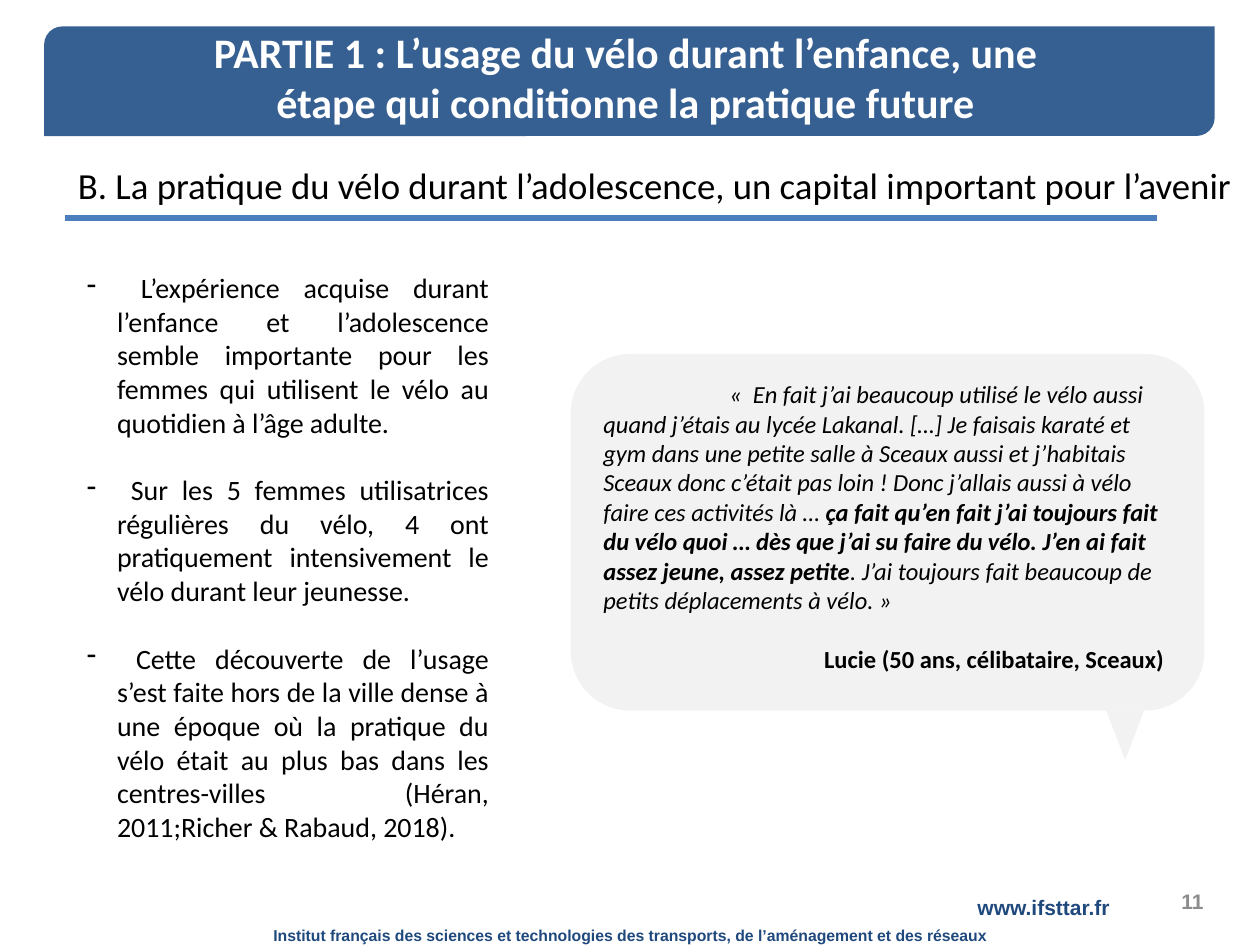
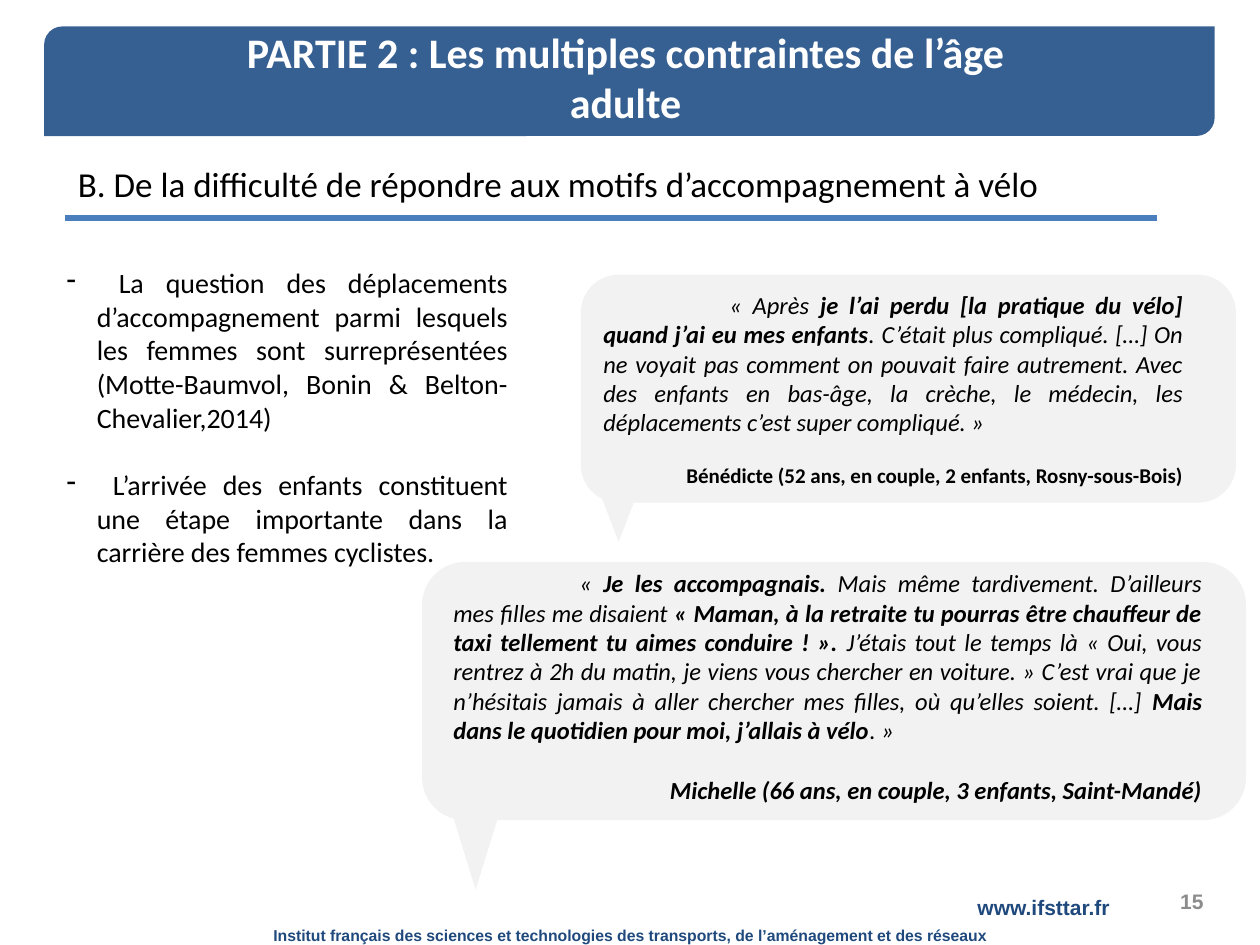
from pptx import Presentation
from pptx.dml.color import RGBColor
from pptx.enum.shapes import MSO_CONNECTOR, MSO_SHAPE
from pptx.enum.text import MSO_ANCHOR, PP_ALIGN
from pptx.oxml.ns import qn
from pptx.util import Emu, Inches, Pt
from lxml.etree import SubElement

WIDTH, HEIGHT = Inches(10), Inches(7.5)
COLUMNS, ROWS = 100, 75

BAND_BLUE = "376092"
RULE_BLUE = "4B7EBC"
FOOTER_BLUE = "1F497D"
NUMBER_GREY = "8C8C8C"
BUBBLE_GREY = "F2F2F2"
WHITE, BLACK = "FFFFFF", "000000"
BODY_FONT, FOOTER_FONT = "Calibri", "Arial"
LINE_HEIGHT = 1.22

INSTITUTE = ("Institut français des sciences et technologies des transports, "
             "de l’aménagement et des réseaux")


def color(value):
    return RGBColor.from_string(value)


def grid(column, row):
    return Emu(int(WIDTH * column / COLUMNS)), Emu(int(HEIGHT * row / ROWS))


def area(left, top, width, height):
    return *grid(left, top), *grid(width, height)


def add_box(page, place, anchor=MSO_ANCHOR.TOP):
    frame = page.shapes.add_textbox(*area(*place)).text_frame
    frame.word_wrap = True
    frame.vertical_anchor = anchor
    return frame


def add_span(para, text, size, hue=BLACK, font=BODY_FONT, bold=False, italic=False):
    span = para.add_run()
    span.text = text
    span.font.name, span.font.size = font, Pt(size)
    span.font.bold, span.font.italic = bold, italic
    span.font.color.rgb = color(hue)


def add_label(page, place, text, size, align=PP_ALIGN.LEFT,
              anchor=MSO_ANCHOR.TOP, **style):
    """Add a text box that holds a single one-style paragraph."""
    para = add_box(page, place, anchor).paragraphs[0]
    para.alignment = align
    add_span(para, text, size, **style)


def add_plain_shape(page, kind, place, fill):
    shape = page.shapes.add_shape(kind, *area(*place))
    shape.shadow.inherit = False
    shape.fill.solid()
    shape.fill.fore_color.rgb = color(fill)
    shape.line.fill.background()
    return shape


def add_rule(page, left, right, row):
    rule = page.shapes.add_connector(
        MSO_CONNECTOR.STRAIGHT, *grid(left, row), *grid(right, row))
    rule.line.color.rgb = color(RULE_BLUE)
    rule.line.width = Pt(3)
    SubElement(rule._element.spPr, qn("a:effectLst"))


def add_page(deck, title, heading, heading_size, number):
    """Add a page with its title band, underlined heading and footer."""
    page = deck.slides.add_slide(deck.slide_layouts[6])
    add_label(page, (0, 73, 100, 2.5), INSTITUTE, 9, PP_ALIGN.CENTER,
              hue=FOOTER_BLUE, font=FOOTER_FONT, bold=True)
    add_label(page, (76.6, 70.5, 20.7, 3), "www.ifsttar.fr", 12,
              hue=FOOTER_BLUE, font=FOOTER_FONT, bold=True)
    add_label(page, (69.7, 69.5, 26.8, 4), number, 12, PP_ALIGN.RIGHT,
              MSO_ANCHOR.MIDDLE, hue=NUMBER_GREY, font=FOOTER_FONT, bold=True)
    add_plain_shape(page, MSO_SHAPE.ROUND_2_DIAG_RECTANGLE,
                    (3.5, 2.1, 92.9, 8.7), BAND_BLUE)
    add_label(page, (15.4, 1.6, 68.5, 8.4), title, 24, PP_ALIGN.CENTER,
              hue=WHITE, bold=True)
    add_label(page, (5.2, 12.4, 94, 4.4), heading, heading_size)
    add_rule(page, 5.2, 91.8, 17.3)
    return page


def add_dash_list(page, place, items, size=16):
    frame = add_box(page, place)
    for index, item in enumerate(items):
        para = frame.add_paragraph() if index else frame.paragraphs[0]
        para.alignment = PP_ALIGN.JUSTIFY
        if index:
            para.space_before = Pt(round(size * LINE_HEIGHT, 1))
        properties = para._p.get_or_add_pPr()
        hanging = Inches(0.24)
        properties.set("marL", str(hanging))
        properties.set("indent", str(-hanging))
        SubElement(properties, qn("a:buChar")).set("char", "-")
        add_span(para, " " + item, size)


def add_bubble(page, body, tail):
    add_plain_shape(page, MSO_SHAPE.ROUNDED_RECTANGLE, body, BUBBLE_GREY)
    add_plain_shape(page, MSO_SHAPE.ISOSCELES_TRIANGLE, tail, BUBBLE_GREY).rotation = 180


def add_quote(page, place, passages, speaker, align=PP_ALIGN.JUSTIFY,
              speaker_size=14, speaker_italic=False):
    """Write a quote whose passages alternate between regular and bold."""
    frame = add_box(page, place)
    quote = frame.paragraphs[0]
    quote.alignment = align
    quote._p.get_or_add_pPr().set("indent", str(Inches(1)))
    for index, passage in enumerate(passages):
        add_span(quote, passage, 14, bold=index % 2 == 1, italic=True)
    signature = frame.add_paragraph()
    signature.alignment = PP_ALIGN.RIGHT
    signature.space_before = Pt(round(speaker_size * LINE_HEIGHT, 1))
    add_span(signature, speaker, speaker_size, bold=True, italic=speaker_italic)


def add_childhood_page(deck):
    page = add_page(
        deck, "PARTIE 1 : L’usage du vélo durant l’enfance, une étape qui conditionne "
        "la pratique future",
        "B. La pratique du vélo durant l’adolescence, un capital important pour l’avenir",
        21, "11")
    add_bubble(page, (45.3, 28.1, 50.3, 28.3), (87.8, 56.4, 3, 3.9))
    add_quote(page, (46.9, 29.6, 46.5, 24.6), [
        "«  En fait j’ai beaucoup utilisé le vélo aussi quand j’étais au lycée Lakanal. "
        "[…] Je faisais karaté et gym dans une petite salle à Sceaux aussi et j’habitais "
        "Sceaux donc c’était pas loin ! Donc j’allais aussi à vélo faire ces activités là … ",
        "ça fait qu’en fait j’ai toujours fait du vélo quoi … dès que j’ai su faire du "
        "vélo. J’en ai fait assez jeune, assez petite",
        ". J’ai toujours fait beaucoup de petits déplacements à vélo. »",
    ], "Lucie (50 ans, célibataire, Sceaux)", PP_ALIGN.LEFT)
    add_dash_list(page, (5.9, 21, 33.9, 46.8), [
        "L’expérience acquise durant l’enfance et l’adolescence semble importante pour "
        "les femmes qui utilisent le vélo au quotidien à l’âge adulte.",
        "Sur les 5 femmes utilisatrices régulières du vélo, 4 ont pratiquement "
        "intensivement le vélo durant leur jeunesse.",
        "Cette découverte de l’usage s’est faite hors de la ville dense à une époque où "
        "la pratique du vélo était au plus bas dans les centres-villes (Héran, "
        "2011;Richer & Rabaud, 2018).",
    ])


def add_adulthood_page(deck):
    page = add_page(
        deck, "PARTIE 2 : Les multiples contraintes de l’âge adulte",
        "B. De la difficulté de répondre aux motifs d’accompagnement à vélo", 20, "15")
    add_bubble(page, (46.1, 21.8, 52, 18.1), (47.6, 39.1, 3, 3.9))
    add_quote(page, (46.9, 22.5, 48, 16.8), [
        "« Après ",
        "je l’ai perdu [la pratique du vélo] quand j’ai eu mes enfants",
        ". C’était plus compliqué. […] On ne voyait pas comment on pouvait faire "
        "autrement. Avec des enfants en bas-âge, la crèche, le médecin, les déplacements "
        "c’est super compliqué. »",
    ], "Bénédicte (52 ans, en couple, 2 enfants, Rosny-sous-Bois)", speaker_size=12)
    add_bubble(page, (33.5, 44.6, 65.4, 20.5), (35.8, 64.3, 3.9, 6.3))
    add_quote(page, (35, 44.6, 61.4, 21.9), [
        "« ",
        "Je les accompagnais.",
        " Mais même tardivement. D’ailleurs mes filles me disaient ",
        "« Maman, à la retraite tu pourras être chauffeur de taxi tellement tu aimes "
        "conduire ! ». ",
        "J’étais tout le temps là « Oui, vous rentrez à 2h du matin, je viens vous "
        "chercher en voiture. » C’est vrai que je n’hésitais jamais à aller chercher mes "
        "filles, où qu’elles soient. […] ",
        "Mais dans le quotidien pour moi, j’allais à vélo",
        ". »",
    ], "Michelle (66 ans, en couple, 3 enfants, Saint-Mandé)", speaker_italic=True)
    add_dash_list(page, (4.3, 20.6, 37, 27.9), [
        "La question des déplacements d’accompagnement parmi lesquels les femmes sont "
        "surreprésentées (Motte-Baumvol, Bonin & Belton-Chevalier,2014)",
        "L’arrivée des enfants constituent une étape importante dans la carrière des "
        "femmes cyclistes.",
    ])


def main():
    deck = Presentation()
    deck.slide_width, deck.slide_height = WIDTH, HEIGHT
    add_childhood_page(deck)
    add_adulthood_page(deck)
    deck.save("out.pptx")


if __name__ == "__main__":
    main()
